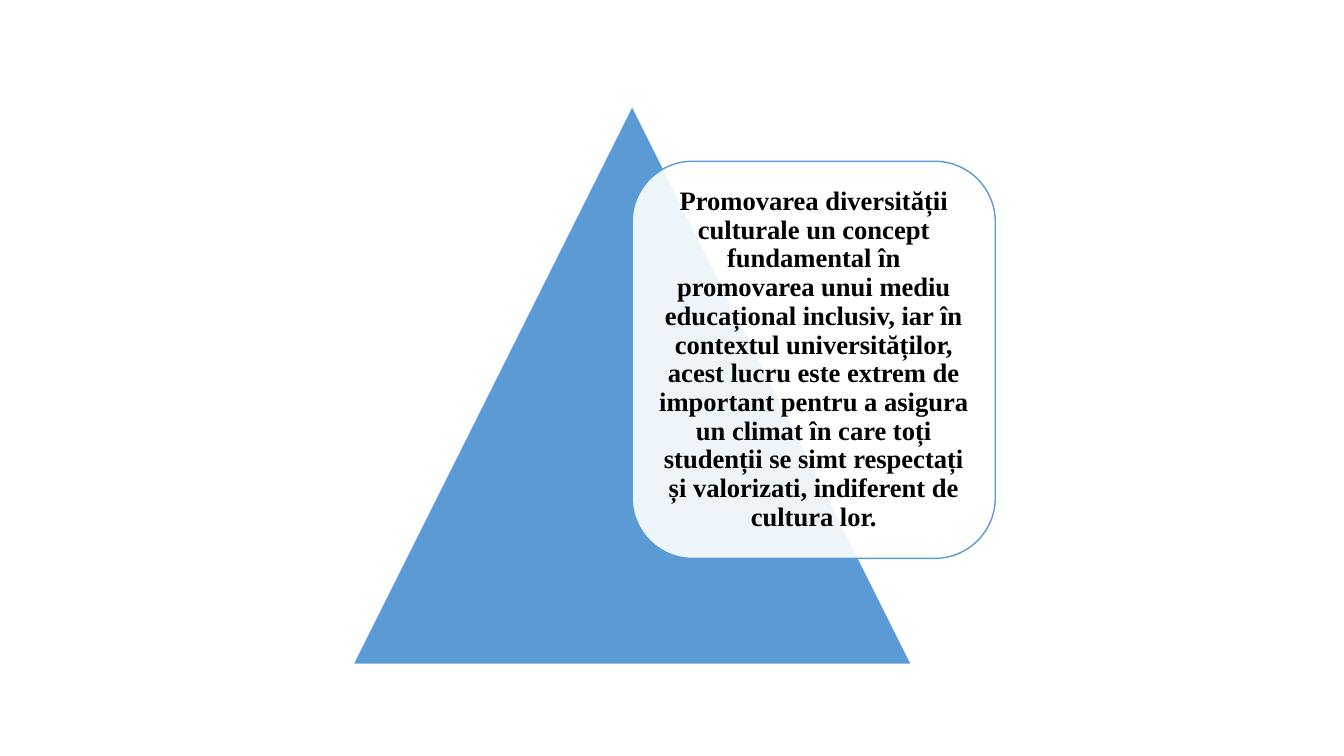
from dataclasses import dataclass

from lxml import etree
from pptx import Presentation
from pptx.dml.color import RGBColor
from pptx.enum import shapes, text
from pptx.oxml import ns
from pptx.util import Inches, Pt


@dataclass(frozen=True)
class Theme:
    accent: RGBColor = RGBColor(0x5B, 0x9B, 0xD5)
    paper: RGBColor = RGBColor(0xFF, 0xFF, 0xFF)
    ink: RGBColor = RGBColor(0, 0, 0)
    font: str = "Times New Roman"
    body_size: float = 19
    line_width: float = 1


THEME = Theme()
MESSAGE = (
    "Promovarea diversității culturale un concept fundamental în promovarea "
    "unui mediu educațional inclusiv, iar în contextul universităților, acest "
    "lucru este extrem de important pentru a asigura un climat în care toți "
    "studenții se simt respectați și valorizati, indiferent de cultura lor."
)


def add_panel(slide, preset, box, fill, line, opacity=100):
    panel = slide.shapes.add_shape(preset, *(Inches(length) for length in box))
    panel.shadow.inherit = False
    panel.fill.solid()
    panel.fill.fore_color.rgb = fill
    panel.line.color.rgb = line
    panel.line.width = Pt(THEME.line_width)
    if opacity < 100:
        color = panel.fill._xPr.find(ns.qn("a:solidFill"))[0]
        etree.SubElement(color, ns.qn("a:alpha"), val=str(opacity * 1000))
    return panel


def write_text(panel, wording, size=THEME.body_size, color=THEME.ink,
               bold=False, inset=0.08, line_spacing=0.9):
    frame = panel.text_frame
    frame.word_wrap = True
    frame.vertical_anchor = text.MSO_ANCHOR.MIDDLE
    frame.margin_left = frame.margin_right = Inches(inset)
    frame.margin_top = frame.margin_bottom = Inches(inset)
    paragraph = frame.paragraphs[0]
    paragraph.alignment = text.PP_ALIGN.CENTER
    paragraph.line_spacing = line_spacing
    run = paragraph.add_run()
    run.text = wording
    run.font.name = THEME.font
    run.font.size = Pt(size)
    run.font.bold = bold
    run.font.color.rgb = color


def add_pyramid(slide, left, top, side):
    """Place a pyramid and a message card that starts at its central axis."""
    add_panel(slide, shapes.MSO_SHAPE.ISOSCELES_TRIANGLE,
              (left, top, side, side), THEME.accent, THEME.paper)
    card_box = (left + side / 2, top + 0.55, side * 0.65, 3.94)
    card = add_panel(slide, shapes.MSO_SHAPE.ROUNDED_RECTANGLE, card_box,
                     THEME.paper, THEME.accent, opacity=90)
    write_text(card, MESSAGE, bold=True)


def main():
    deck = Presentation()
    deck.slide_width, deck.slide_height = Inches(13.33), Inches(7.5)
    slide = deck.slides.add_slide(deck.slide_layouts[6])
    add_pyramid(slide, left=3.5, top=1.05, side=5.54)
    deck.save("out.pptx")


if __name__ == "__main__":
    main()
